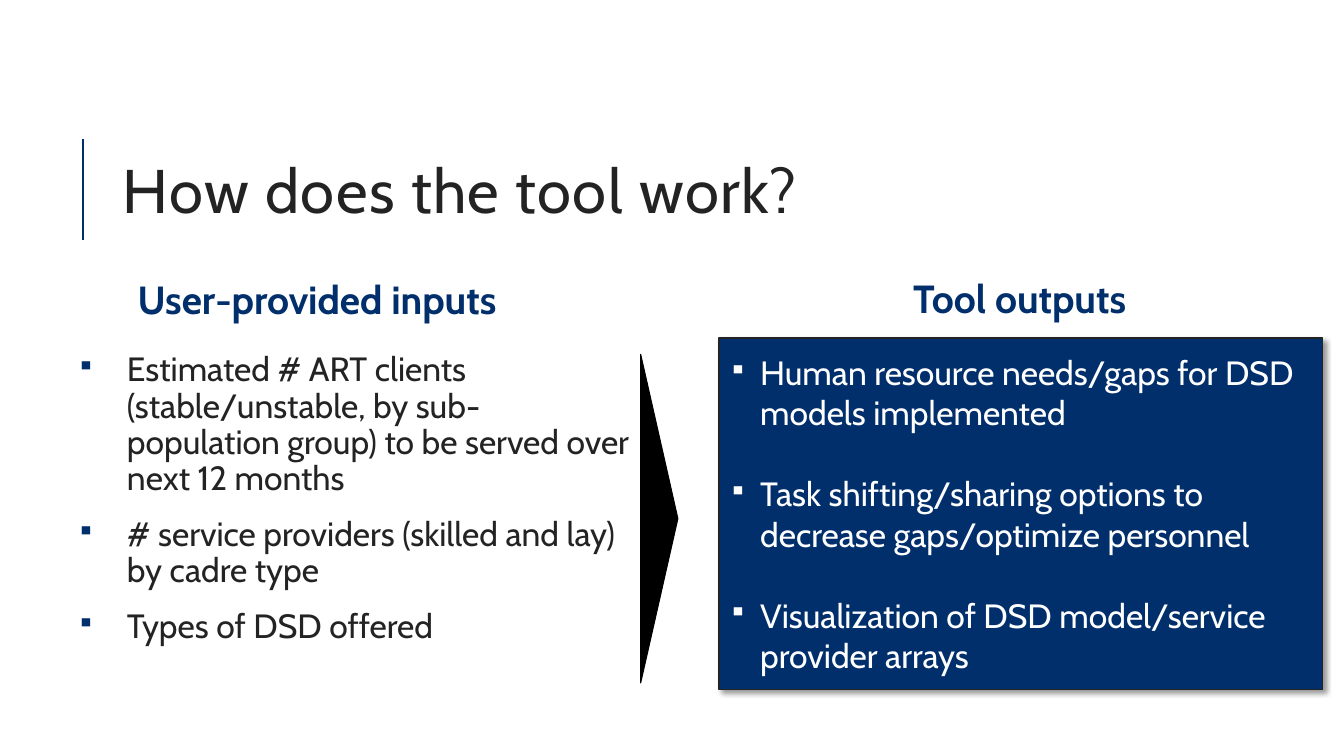
from lxml import etree
from pptx import Presentation
from pptx.dml.color import RGBColor
from pptx.enum import shapes, text
from pptx.oxml import ns
from pptx.util import Pt

COLORS = {"navy": "002F6C", "ink": "232323", "white": "FFFFFF", "black": "000000"}
FONT = "Cabin"

INPUTS = [
    "Estimated # ART clients (stable/unstable, by sub-population group) "
    "to be served over next 12 months",
    "# service providers (skilled and lay) by cadre type",
    "Types of DSD offered",
]
OUTPUTS = [
    "Human resource needs/gaps for DSD models implemented",
    "Task shifting/sharing options to decrease gaps/optimize personnel",
    "Visualization of DSD model/service provider arrays",
]


def rgb(color):
    return RGBColor.from_string(COLORS[color])


def add_xml(parent, tag, **attributes):
    return etree.SubElement(parent, ns.qn(tag), attributes)


def style(paragraph, size, color, bold=False):
    font = paragraph.font
    font.name, font.size, font.bold = FONT, Pt(size), bold
    font.color.rgb = rgb(color)


def add_textbox(slide, left, top, width, height):
    box = slide.shapes.add_textbox(Pt(left), Pt(top), Pt(width), Pt(height))
    box.text_frame.word_wrap = True
    return box.text_frame


def fill_bullets(frame, items, color, bullet_color, indent, gap, spacing=None):
    """Write one bulleted paragraph per item, with gap points between them."""
    for index, item in enumerate(items):
        paragraph = frame.paragraphs[0] if index == 0 else frame.add_paragraph()
        paragraph.text = item
        paragraph.alignment = text.PP_ALIGN.LEFT
        paragraph.line_spacing = spacing
        paragraph.space_before = Pt(gap if index else 0)
        properties = paragraph._p.get_or_add_pPr()
        properties.set("marL", str(Pt(indent)))
        properties.set("indent", str(-Pt(indent)))
        add_xml(add_xml(properties, "a:buClr"), "a:srgbClr", val=COLORS[bullet_color])
        add_xml(properties, "a:buSzPct", val="75000")
        add_xml(properties, "a:buChar", char="▪")
        style(paragraph, 24, color)


def add_title(slide, left, top, width, height):
    rule = slide.shapes.add_connector(
        shapes.MSO_CONNECTOR.STRAIGHT,
        Pt(left - 21), Pt(top + 85), Pt(left - 21), Pt(top + 13))
    rule.line.color.rgb = rgb("navy")
    rule.line.width = Pt(1.5)
    add_xml(rule._element.spPr, "a:effectLst")

    frame = add_textbox(slide, left, top, width, height)
    frame.vertical_anchor = text.MSO_ANCHOR.MIDDLE
    title = frame.paragraphs[0]
    title.text = "How does the tool work?"
    title.line_spacing = 0.8
    style(title, 44, "ink")
    title._p.pPr.find(ns.qn("a:defRPr")).set("spc", "100")


def add_heading(slide, wording, left, top, width, height):
    frame = add_textbox(slide, left, top, width, height)
    frame.word_wrap = False
    heading = frame.paragraphs[0]
    heading.text = wording
    heading.alignment = text.PP_ALIGN.CENTER
    style(heading, 28, "navy", bold=True)


def add_inputs(slide, left, top, width, height):
    add_heading(slide, "User-provided inputs", left + 29.5, top - 55.5, 291.6, 41)
    frame = add_textbox(slide, left, top, width, height)
    frame.margin_left = frame.margin_right = Pt(3.6)
    frame.margin_top = frame.margin_bottom = Pt(3.6)
    fill_bullets(frame, INPUTS, "ink", "navy", indent=36, gap=14, spacing=0.9)


def add_flow_arrow(slide, left, top, width, height):
    """Turn a triangle to point right inside the given upright box."""
    shift = (height - width) / 2
    arrow = slide.shapes.add_shape(
        shapes.MSO_SHAPE.ISOSCELES_TRIANGLE,
        Pt(left - shift), Pt(top + shift), Pt(height), Pt(width))
    arrow.rotation = 90
    arrow.shadow.inherit = False
    arrow.fill.solid()
    arrow.fill.fore_color.rgb = rgb("black")
    arrow.line.color.rgb = rgb("black")
    arrow.line.width = Pt(0.75)


def add_outputs(slide, left, top, width, height):
    add_heading(slide, "Tool outputs", left + 124.5, top - 48.5, 180.7, 41)
    panel = slide.shapes.add_shape(
        shapes.MSO_SHAPE.RECTANGLE, Pt(left), Pt(top), Pt(width), Pt(height))
    panel.fill.solid()
    panel.fill.fore_color.rgb = rgb("navy")
    panel.line.color.rgb = rgb("ink")
    panel.line.width = Pt(1.25)
    panel.shadow.inherit = False
    effects = panel._element.spPr.find(ns.qn("a:effectLst"))
    shadow = add_xml(effects, "a:outerShdw", blurRad=str(Pt(4)), dist=str(Pt(3)),
                     dir="2700000", algn="tl", rotWithShape="0")
    shade = add_xml(shadow, "a:srgbClr", val=COLORS["black"])
    add_xml(shade, "a:alpha", val="40000")

    frame = panel.text_frame
    frame.word_wrap = True
    frame.vertical_anchor = text.MSO_ANCHOR.MIDDLE
    fill_bullets(frame, OUTPUTS, "white", "white", indent=22.5, gap=29)


def main():
    presentation = Presentation()
    presentation.slide_width, presentation.slide_height = Pt(960), Pt(540)
    slide = presentation.slides.add_slide(presentation.slide_layouts[6])
    add_title(slide, 80.6, 86.4, 765.4, 106.6)
    add_inputs(slide, 51.1, 248.4, 403.9, 244.1)
    add_flow_arrow(slide, 457.6, 253.1, 26.6, 234.7)
    add_outputs(slide, 513.4, 241.2, 431.3, 251.3)
    presentation.save("out.pptx")


if __name__ == "__main__":
    main()
